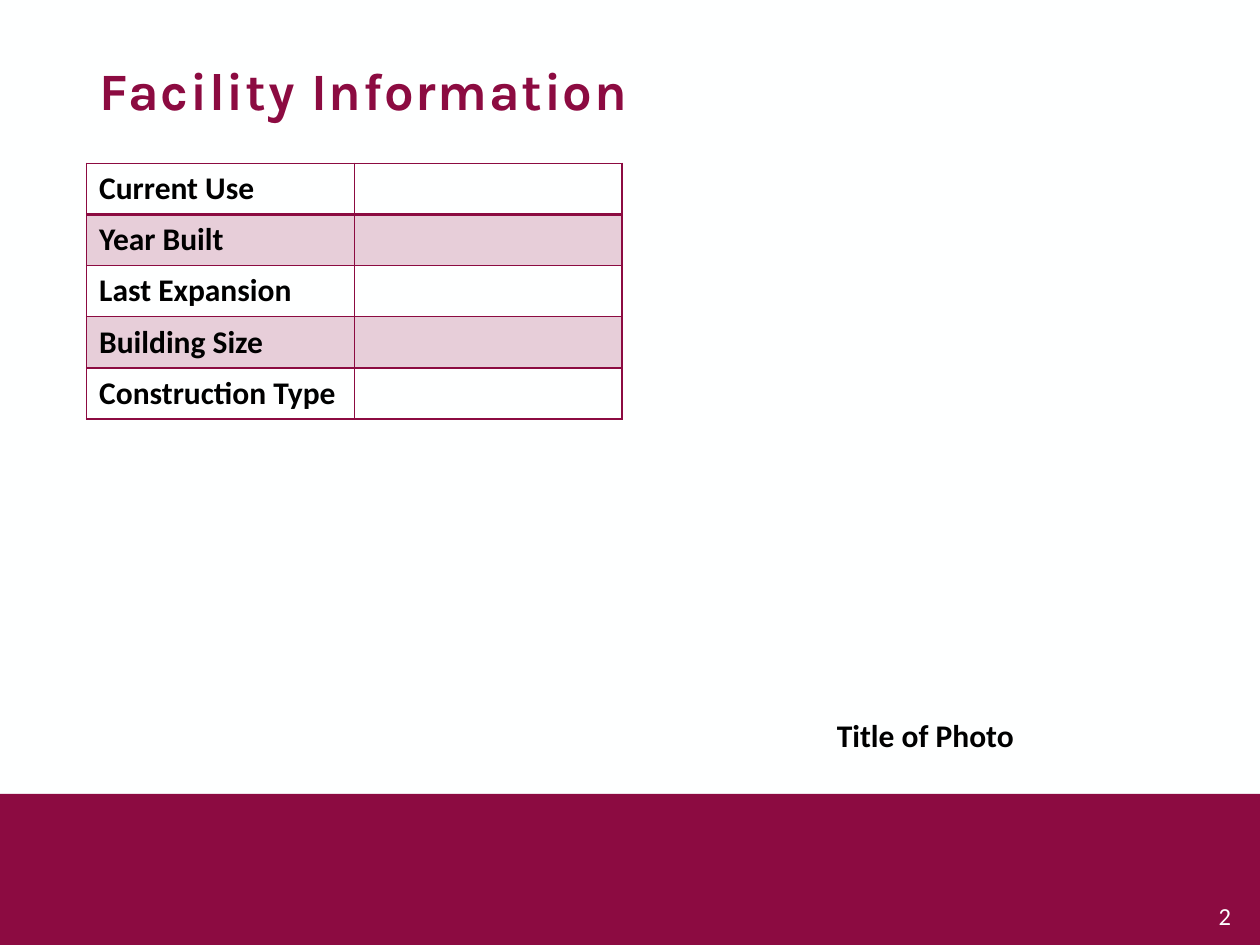
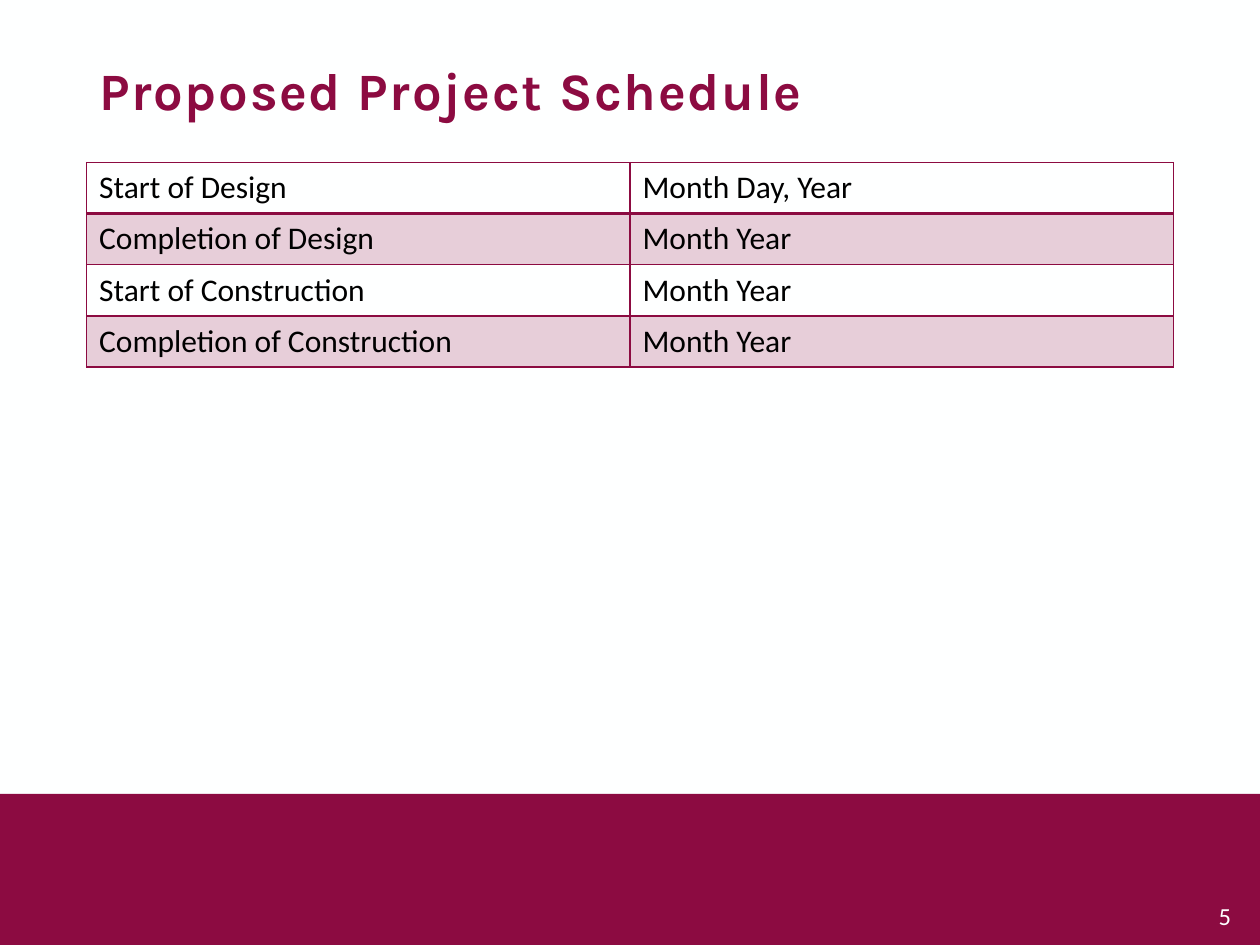
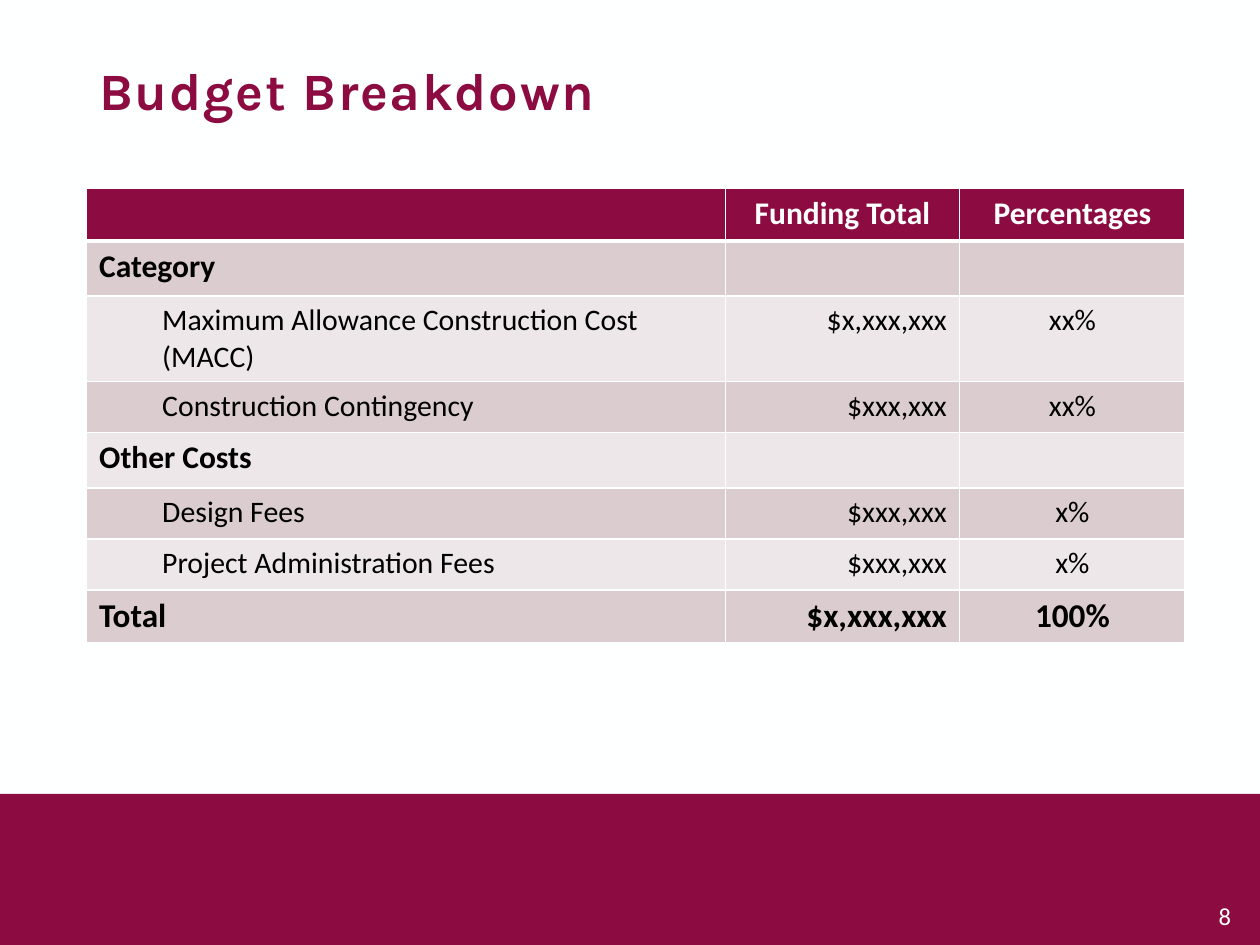
from pptx import Presentation
from pptx.dml.color import RGBColor
from pptx.enum import shapes, text
from pptx.oxml import parse_xml
from pptx.oxml.ns import nsdecls, qn
from pptx.util import Pt

MAROON = RGBColor(0x8C, 0x0B, 0x41)
WHITE = RGBColor(0xFE, 0xFF, 0xFF)
BLACK = RGBColor(0, 0, 0)
ROSE = RGBColor(0xDA, 0xCC, 0xCF)
PALE_ROSE = RGBColor(0xEE, 0xE7, 0xE9)

BODY_FONT = "Calibri"
TITLE_FONT = "Karla"
LEFT = 49.5
CONTENT_WIDTH = 621
ROW_HEIGHT = 29.2
INDENT = 36

START, CENTER, END = text.PP_ALIGN.LEFT, text.PP_ALIGN.CENTER, text.PP_ALIGN.RIGHT


def write(frame, words, size=18, color=BLACK, bold=False, align=START):
    paragraph = frame.paragraphs[0]
    paragraph.text = words
    paragraph.alignment = align
    font = paragraph.font
    font.name, font.size, font.bold = BODY_FONT, Pt(size), bold
    font.color.rgb = color
    return paragraph


def add_label(slide, words, left, top, width, height, **style):
    label = slide.shapes.add_textbox(Pt(left), Pt(top), Pt(width), Pt(height))
    label.text_frame.word_wrap = True
    label.text_frame.auto_size = text.MSO_AUTO_SIZE.SHAPE_TO_FIT_TEXT
    write(label.text_frame, words, **style)


def add_page(prs, heading, number):
    """Add a slide with its heading, bottom band and page number."""
    slide = prs.slides.add_slide(prs.slide_layouts[5])
    band = slide.shapes.add_shape(
        shapes.MSO_SHAPE.RECTANGLE, 0, Pt(453.6), prs.slide_width, Pt(86.4))
    band.shadow.inherit = False
    band.fill.solid()
    band.fill.fore_color.rgb = MAROON
    band.line.fill.background()
    add_label(slide, str(number), 670.3, 511.2, 40.3, 24.2,
              size=14, color=WHITE, align=END)

    title = slide.shapes.title
    title.left, title.top = Pt(LEFT), Pt(28.8)
    title.width, title.height = Pt(CONTENT_WIDTH), Pt(49.7)
    title.text_frame.vertical_anchor = text.MSO_ANCHOR.MIDDLE
    paragraph = write(title.text_frame, heading, 30, MAROON, True)
    paragraph.line_spacing = 0.9
    paragraph.font.name = TITLE_FONT
    for run in paragraph.runs:
        run.font._element.set("spc", "100")
    return slide


def set_borders(cell, color, top=1, bottom=1):
    properties = cell._tc.get_or_add_tcPr()
    for side, width in (("L", 1), ("R", 1), ("T", top), ("B", bottom)):
        properties.append(parse_xml(
            f'<a:ln{side} {nsdecls("a")} w="{Pt(width)}"><a:solidFill>'
            f'<a:srgbClr val="{color}"/></a:solidFill></a:ln{side}>'))


def set_fill(cell, color, opacity=100):
    cell.fill.solid()
    cell.fill.fore_color.rgb = color
    if opacity < 100:
        tint = cell._tc.tcPr.find(qn("a:solidFill"))[0]
        tint.append(parse_xml(f'<a:alpha {nsdecls("a")} val="{opacity * 1000}"/>'))


def add_grid(slide, top, widths, heights, border, rule):
    """Add a bordered table whose first row ends in a line of width rule."""
    grid = slide.shapes.add_table(
        len(heights), len(widths), Pt(LEFT), Pt(top),
        Pt(sum(widths)), Pt(sum(heights))).table
    grid.first_row = grid.horz_banding = False
    for column, width in zip(grid.columns, widths):
        column.width = Pt(width)
    for index, (row, height) in enumerate(zip(grid.rows, heights)):
        row.height = Pt(height)
        for cell in row.cells:
            set_borders(cell, border, top=rule if index == 1 else 1,
                        bottom=rule if index == 0 else 1)
    return grid


def add_fact_table(slide, top, width, facts, bold=False):
    """Add a two-column table with every second row tinted."""
    grid = add_grid(slide, top, [width / 2] * 2, [ROW_HEIGHT] * len(facts), MAROON, 2)
    for index, (row, fact) in enumerate(zip(grid.rows, facts)):
        for cell, words in zip(row.cells, fact):
            if index % 2:
                set_fill(cell, MAROON, 20)
            else:
                cell.fill.background()
            write(cell.text_frame, words, bold=bold)


def add_budget_table(slide, rows):
    """Add the budget from rows of (kind, height, words)."""
    styles = {
        "header": dict(size=18, color=WHITE, bold=True),
        "group": dict(size=18, bold=True),
        "item": dict(size=17),
        "total": dict(size=19, bold=True),
    }
    grid = add_grid(slide, 107.3, [365, 133.9, 128.9],
                    [height for _, height, _ in rows], WHITE, 3)
    for index, (row, (kind, _, words)) in enumerate(zip(grid.rows, rows)):
        fill = MAROON if kind == "header" else ROSE if index % 2 else PALE_ROSE
        amount_align = CENTER if kind == "header" else END
        for cell, entry, align in zip(row.cells, words, (START, amount_align, CENTER)):
            set_fill(cell, fill)
            write(cell.text_frame, entry, align=align, **styles[kind])
        if kind == "item":
            name = row.cells[0].text_frame.paragraphs[0]
            name.level = 1
            name._p.get_or_add_pPr().set("marL", str(Pt(INDENT)))


def main():
    prs = Presentation()
    prs.slide_width, prs.slide_height = Pt(720), Pt(540)
    background = prs.slide_master.background.fill
    background.solid()
    background.fore_color.rgb = WHITE

    facility = add_page(prs, "Facility Information", 2)
    features = ("Current Use", "Year Built", "Last Expansion",
                "Building Size", "Construction Type")
    add_fact_table(facility, 93.4, 306, [(feature, "") for feature in features], bold=True)
    add_label(facility, "Title of Photo", 375.8, 405.4, 306, 29,
              bold=True, align=CENTER)

    schedule = add_page(prs, "Proposed Project Schedule", 5)
    add_fact_table(schedule, 92.9, CONTENT_WIDTH, [
        ("Start of Design", "Month Day, Year"),
        ("Completion of Design", "Month Year"),
        ("Start of Construction", "Month Year"),
        ("Completion of Construction", "Month Year"),
    ])

    budget = add_page(prs, "Budget Breakdown", 8)
    add_budget_table(budget, [
        ("header", 30.4, ("", "Funding Total", "Percentages")),
        ("group", 31.6, ("Category", "", "")),
        ("item", 48.7, ("Maximum Allowance Construction Cost (MACC)", "$x,xxx,xxx", "xx%")),
        ("item", ROW_HEIGHT, ("Construction Contingency", "$xxx,xxx", "xx%")),
        ("group", 31.6, ("Other Costs", "", "")),
        ("item", ROW_HEIGHT, ("Design Fees", "$xxx,xxx", "x%")),
        ("item", ROW_HEIGHT, ("Project Administration Fees", "$xxx,xxx", "x%")),
        ("total", 30.4, ("Total", "$x,xxx,xxx", "100%")),
    ])

    prs.save("out.pptx")


if __name__ == "__main__":
    main()
